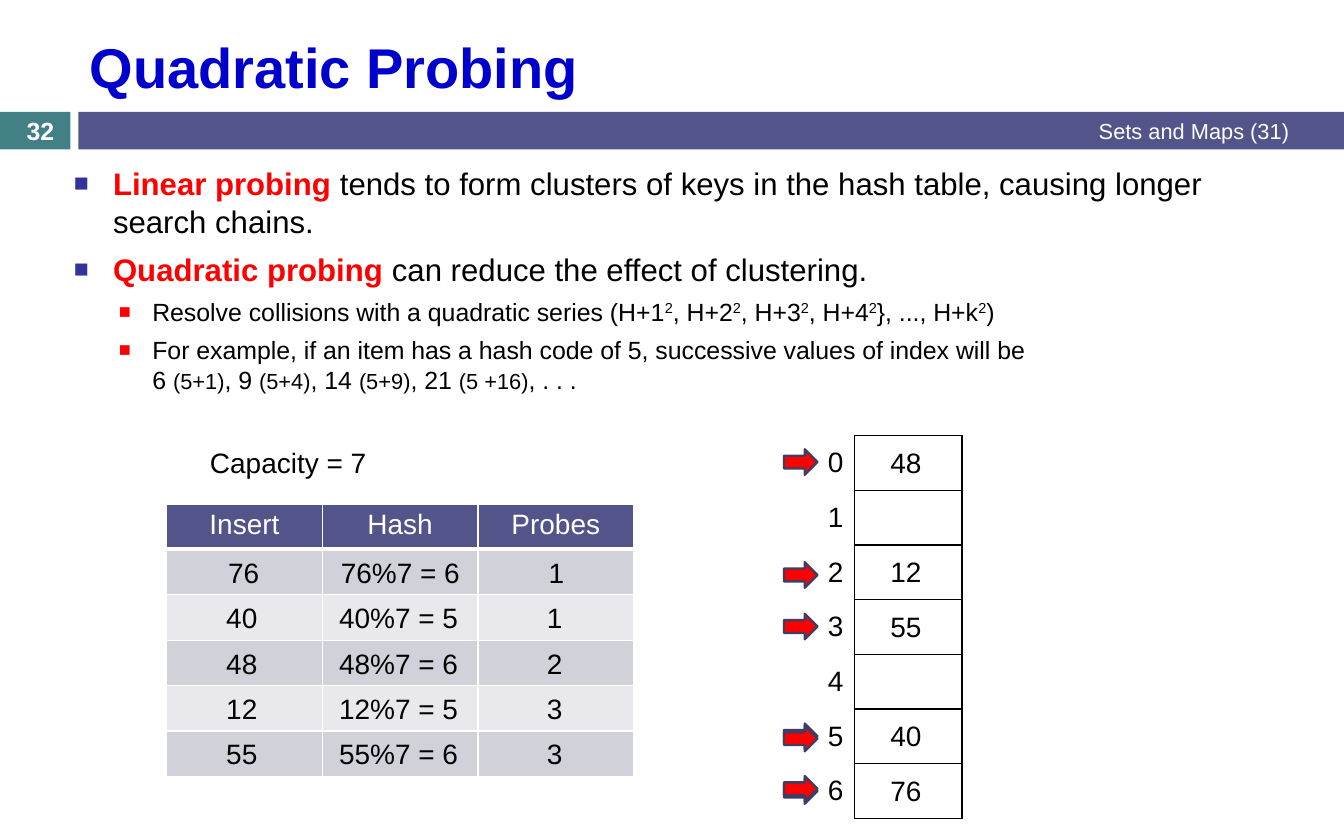
from lxml.etree import SubElement
from pptx import Presentation
from pptx.dml.color import RGBColor
from pptx.enum.shapes import MSO_SHAPE
from pptx.enum.text import MSO_ANCHOR, MSO_AUTO_SIZE, PP_ALIGN
from pptx.oxml import parse_xml
from pptx.oxml.ns import nsdecls, qn
from pptx.util import Cm, Pt

FONT = "Arial"
COLORS = {
    "title": "0000CC", "teal": "438086", "bar": "53548A", "bullet": "333399",
    "red": "FF0000", "edge": "3D3E66", "dark": "D1D1DA", "light": "E9E9ED",
    "white": "FFFFFF", "black": "000000",
}
NO_STYLE = "{2D5ABB26-0587-4C30-8999-92F81FD0307C}"

# key, hash, probes, slot in the hash table
KEYS = [
    ("76", "76%7 = 6", "1", 6),
    ("40", "40%7 = 5", "1", 5),
    ("48", "48%7 = 6", "2", 0),
    ("12", "12%7 = 5", "3", 2),
    ("55", "55%7 = 6", "3", 3),
]
COLS = [(4.24, 2.49), (7.26, 3.56), (10.8, 3.56)]
ARROWS = [17.65, 16.41, 16.46, 17.6, 12.75, 10.19, 13.92]
STEP = 1.03
SLOT = 1.24


def rgb(name):
    return RGBColor.from_string(COLORS[name])


def style(font, size, color="black", bold=False):
    font.name = FONT
    font.size = Pt(size)
    font.bold = bold
    font.color.rgb = rgb(color)


def add_block(slide, kind, box, fill, line=None):
    shape = slide.shapes.add_shape(kind, *map(Cm, box))
    shape.shadow.inherit = False
    shape.fill.solid()
    shape.fill.fore_color.rgb = rgb(fill)
    if line:
        shape.line.color.rgb = rgb(line)
        shape.line.width = Pt(1.5)
    else:
        shape.line.fill.background()


def add_text(slide, text, box, size=18, color="black", bold=False,
             align=PP_ALIGN.CENTER, anchor=None):
    """Add a one-line text box; without an anchor it grows with its text."""
    frame = slide.shapes.add_textbox(*map(Cm, box)).text_frame
    frame.word_wrap = True
    if anchor is None:
        frame.auto_size = MSO_AUTO_SIZE.SHAPE_TO_FIT_TEXT
    else:
        frame.vertical_anchor = anchor
    para = frame.paragraphs[0]
    para.text = text
    para.alignment = align
    style(para.font, size, color, bold)


def place(holder, box):
    holder.left, holder.top, holder.width, holder.height = map(Cm, box)
    holder.text_frame.auto_size = MSO_AUTO_SIZE.NONE
    return holder.text_frame


def add_title(slide):
    frame = place(slide.shapes.title, (1.78, 0.48, 27.71, 2.03))
    frame.vertical_anchor = MSO_ANCHOR.MIDDLE
    para = frame.paragraphs[0]
    para.text = "Quadratic Probing"
    para.alignment = PP_ALIGN.LEFT
    style(para.font, 36, "title", True)


def add_item(frame, level):
    """Return a new bulleted paragraph of the list."""
    para = frame.paragraphs[0]
    if para.runs:
        para = frame.add_paragraph()
    para.level = level
    para.space_before = Pt((7, 5.5)[level])
    style(para.font, (20, 16)[level])
    props = para._p.get_or_add_pPr()
    props.set("marL", str(Cm((0.89, 1.78)[level])))
    props.set("indent", str(-Cm((0.89, 0.76)[level])))
    marks = [
        f'<a:buClr {nsdecls("a")}><a:srgbClr val="{COLORS[("bullet", "red")[level]]}"/></a:buClr>',
        f'<a:buSzPct {nsdecls("a")} val="80000"/>',
        f'<a:buFont {nsdecls("a")} typeface="{FONT}"/>',
        f'<a:buChar {nsdecls("a")} char="■"/>',
    ]
    last = props.find(qn("a:defRPr"))
    for mark in marks:
        last.addprevious(parse_xml(mark))
    return para


def add_run(para, text, size=None, key=False, power=False):
    run = para.add_run()
    run.text = text
    if size:
        run.font.size = Pt(size)
    if key:
        run.font.bold = True
        run.font.color.rgb = rgb("red")
    if power:
        run._r.get_or_add_rPr().set("baseline", "30000")


def add_list(slide):
    frame = place(slide.placeholders[1], (1.42, 3.61, 27.71, 5.51))
    for term, rest in [
        ("Linear probing ", "tends to form clusters of keys in the hash table, "
                            "causing longer search chains."),
        ("Quadratic probing ", "can reduce the effect of clustering."),
    ]:
        para = add_item(frame, 0)
        add_run(para, term, key=True)
        add_run(para, rest)

    para = add_item(frame, 1)
    for base in ["Resolve collisions with a quadratic series (H+1",
                 ", H+2", ", H+3", ", H+4", "}, ..., H+k"]:
        add_run(para, base)
        add_run(para, "2", power=True)
    add_run(para, ")")

    para = add_item(frame, 1)
    add_run(para, "For example, if an item has a hash code of 5, "
                  "successive values of index will be ")
    para.add_line_break()
    for value, sum_ in [("6 ", "(5+1)"), (", 9 ", "(5+4)"),
                        (", 14 ", "(5+9)"), (", 21 ", "(5 +16)")]:
        add_run(para, value)
        add_run(para, sum_, size=14)
    add_run(para, ", . . .")


def add_grid(slide, rows, cols, box):
    frame = slide.shapes.add_table(rows, cols, *map(Cm, box))
    table = frame.table
    table.first_row = table.horz_banding = False
    table._tbl.tblPr.find(qn("a:tableStyleId")).text = NO_STYLE
    return table


def set_edges(cell, color, **widths):
    """Draw cell borders; widths are points by side (L, R, T, B)."""
    props = cell._tc.get_or_add_tcPr()
    for spot, side in enumerate(s for s in "LRTB" if s in widths):
        line = parse_xml(f'<a:ln{side} {nsdecls("a")} w="{Pt(widths[side])}"/>')
        fill = SubElement(line, qn("a:solidFill"))
        SubElement(fill, qn("a:srgbClr")).set("val", COLORS[color])
        props.insert(spot, line)


def fill_cell(cell, text, color, align):
    para = cell.text_frame.paragraphs[0]
    para.text = text
    para.alignment = align
    style(para.font, 18, color)


def add_probes(slide):
    table = add_grid(slide, 6, 3, (3.78, 11.43, 10.59, 6 * STEP))
    for row in range(6):
        for col, head in enumerate(["Insert", "Hash", "Probes"]):
            cell = table.cell(row, col)
            cell.fill.solid()
            shade = ("light", "dark")[row % 2] if row else "bar"
            cell.fill.fore_color.rgb = rgb(shade)
            set_edges(cell, "white", L=1, R=1, T=1, B=1 if row else 3)
            if row == 0:
                fill_cell(cell, head, "white", PP_ALIGN.CENTER)


def add_slots(slide):
    table = add_grid(slide, 7, 2, (16.94, 9.88, 4.88, 7 * SLOT))
    for row in range(7):
        index, store = table.cell(row, 0), table.cell(row, 1)
        index.vertical_anchor = MSO_ANCHOR.MIDDLE
        fill_cell(index, str(row), "black", PP_ALIGN.RIGHT)
        set_edges(index, "black", R=1)
        set_edges(store, "black", L=1, R=1, T=1, B=1)


def add_keys(slide):
    for row, (*texts, slot) in enumerate(KEYS):
        for text, (left, width) in zip(texts, COLS):
            shift = 0.04 if row == 0 else 0
            add_text(slide, text, (left + shift, 12.47 + row * STEP, width, 1.02))
        add_text(slide, texts[0], (19.3, 9.98 + slot * SLOT, 2.49, 1.02))


def main():
    deck = Presentation()
    deck.slide_width, deck.slide_height = Cm(30.48), Cm(19.05)
    slide = deck.slides.add_slide(deck.slide_layouts[1])
    add_block(slide, MSO_SHAPE.RECTANGLE, (0, 2.54, 1.6, 0.85), "teal")
    add_block(slide, MSO_SHAPE.RECTANGLE, (1.78, 2.54, 28.7, 0.85), "bar")
    add_title(slide)
    add_list(slide)
    add_text(slide, "Sets and Maps (31)", (11.43, 2.52, 18.06, 0.89), 14, "white",
             align=PP_ALIGN.RIGHT, anchor=MSO_ANCHOR.MIDDLE)
    add_text(slide, "32", (0, 2.57, 1.83, 0.76), 16, "white", True,
             anchor=MSO_ANCHOR.MIDDLE)
    add_probes(slide)
    add_slots(slide)
    add_keys(slide)
    add_text(slide, "Capacity = 7", (3.78, 9.98, 5.51, 1.02))
    for top in ARROWS:
        add_block(slide, MSO_SHAPE.RIGHT_ARROW, (17.78, top, 0.76, 0.58), "red", "edge")
    deck.save("out.pptx")


if __name__ == "__main__":
    main()
